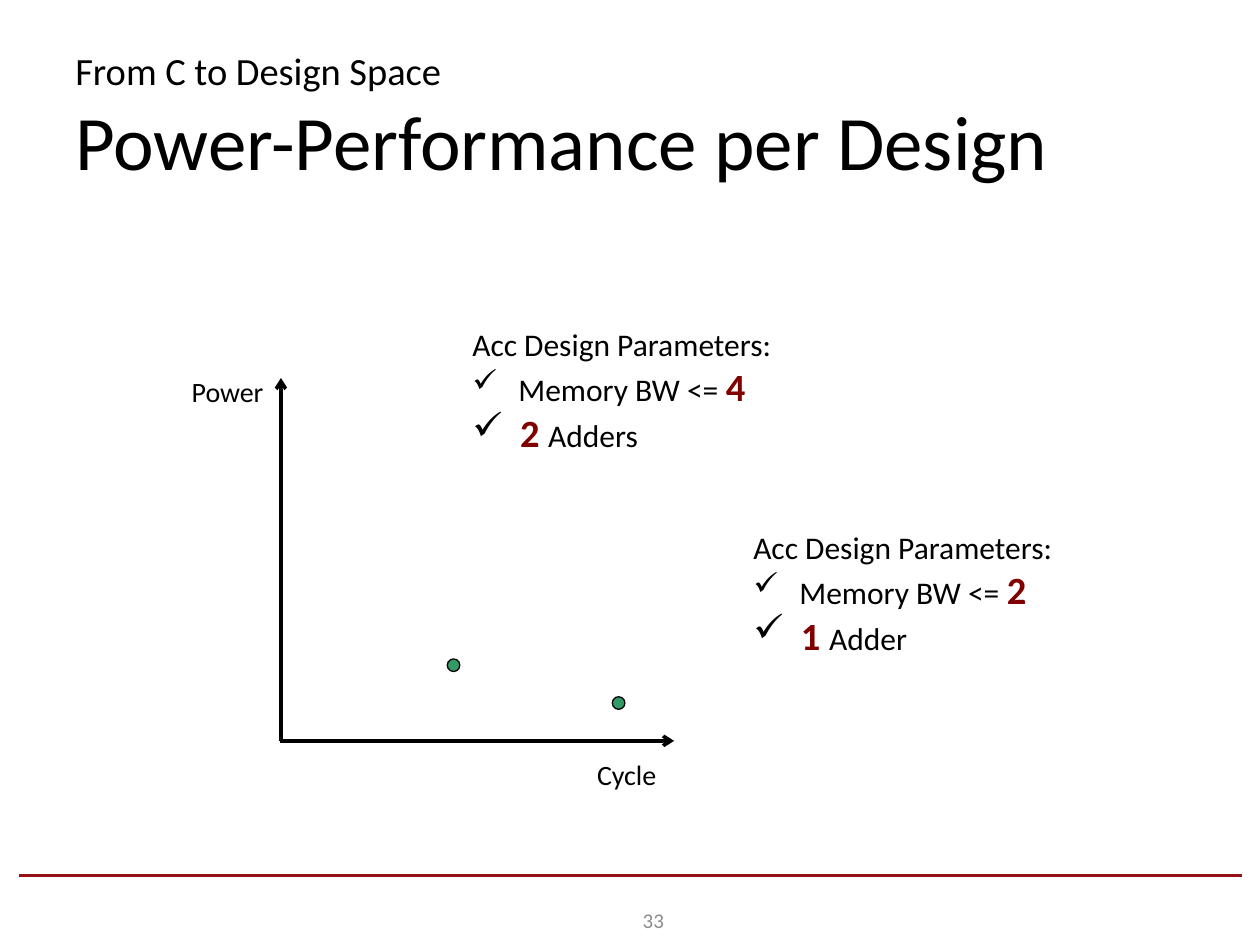
from dataclasses import dataclass

from lxml.etree import SubElement
from pptx import Presentation
from pptx.dml.color import RGBColor
from pptx.enum.shapes import MSO_CONNECTOR, MSO_SHAPE
from pptx.enum.text import MSO_ANCHOR, PP_ALIGN
from pptx.oxml.ns import qn
from pptx.util import Inches, Pt

BLACK = RGBColor(0, 0, 0)
GREY = RGBColor(0x8C, 0x8C, 0x8C)
RED = RGBColor(0x97, 0x12, 0x17)
MAROON = RGBColor(0x80, 0, 0)
GREEN = RGBColor(0x33, 0x99, 0x66)

BASE = {"name": "Calibri", "size": Pt(18), "bold": False}
BIG = {"size": Pt(22), "bold": True}
DOT = 0.1


@dataclass
class Line:
    start: tuple[float, float]
    end: tuple[float, float]
    color: RGBColor = BLACK
    arrow: bool = True


@dataclass
class Label:
    text: str
    box: tuple[float, float, float, float]
    size: int = 16
    color: RGBColor = BLACK
    align: PP_ALIGN = PP_ALIGN.LEFT
    anchor: MSO_ANCHOR = MSO_ANCHOR.TOP


@dataclass
class Design:
    dot: tuple[float, float]
    note: tuple[float, float]
    width: str
    count: str
    unit: str


LINES = [
    Line((0.15, 6.95), (9.86, 6.95), RED, False),
    Line((2.22, 5.88), (5.35, 5.88)),
    Line((2.23, 5.88), (2.23, 3)),
]
LABELS = [
    Label("Cycle", (4.64, 5.96, 0.98, 0.37)),
    Label("Power", (1.21, 2.92, 0.98, 0.37), align=PP_ALIGN.RIGHT),
    Label("33", (4.02, 7.1, 2.33, 0.4), 12, GREY, PP_ALIGN.CENTER, MSO_ANCHOR.MIDDLE),
]
DESIGNS = [
    Design((3.55, 5.23), (3.65, 2.53), "4", "2", "Adders"),
    Design((4.86, 5.53), (5.88, 4.14), "2", "1", "Adder"),
]


def add_run(para, text: str, color: RGBColor = BLACK, **form) -> None:
    run = para.add_run()
    run.text = text
    for key, value in (BASE | form).items():
        setattr(run.font, key, value)
    run.font.color.rgb = color


def add_box(slide, box: tuple, anchor: MSO_ANCHOR = MSO_ANCHOR.TOP):
    frame = slide.shapes.add_textbox(*map(Inches, box)).text_frame
    frame.word_wrap = True
    frame.vertical_anchor = anchor
    return frame


def add_check(para) -> None:
    props = para._p.get_or_add_pPr()
    props.set("marL", str(Inches(0.31)))
    props.set("indent", str(-Inches(0.31)))
    SubElement(props, qn("a:buChar"), char="✓")


def draw_line(slide, item: Line) -> None:
    line = slide.shapes.add_connector(
        MSO_CONNECTOR.STRAIGHT, *map(Inches, item.start + item.end))
    line.line.color.rgb = item.color
    line.line.width = Pt(2)
    if item.arrow:
        SubElement(line.line._get_or_add_ln(), qn("a:tailEnd"), type="arrow")
    SubElement(line._element.spPr, qn("a:effectLst"))


def draw_label(slide, item: Label) -> None:
    para = add_box(slide, item.box, item.anchor).paragraphs[0]
    para.alignment = item.align
    add_run(para, item.text, item.color, size=Pt(item.size))


def draw_design(slide, item: Design) -> None:
    # Point on the plot
    dot = slide.shapes.add_shape(
        MSO_SHAPE.OVAL, *map(Inches, item.dot + (DOT, DOT)))
    dot.shadow.inherit = False
    dot.fill.solid()
    dot.fill.fore_color.rgb = GREEN
    dot.line.color.rgb = BLACK
    dot.line.width = Pt(0.75)

    # Parameters of the design
    frame = add_box(slide, item.note + (3.62, 1.14))
    add_run(frame.paragraphs[0], "Acc Design Parameters:")
    para = frame.add_paragraph()
    add_check(para)
    add_run(para, " Memory BW <= ")
    add_run(para, item.width, MAROON, **BIG)
    para = frame.add_paragraph()
    add_check(para)
    add_run(para, " ", **BIG)
    add_run(para, f"{item.count} ", MAROON, **BIG)
    add_run(para, item.unit)


def draw_title(slide) -> None:
    para = add_box(slide, (0.5, 0.3, 9, 1.25), MSO_ANCHOR.MIDDLE).paragraphs[0]
    add_run(para, "From C to Design Space", size=Pt(22))
    para.add_line_break()
    add_run(para, "Power-Performance per Design", size=Pt(44))


def main() -> None:
    deck = Presentation()
    deck.slide_width, deck.slide_height = Inches(10), Inches(7.5)
    slide = deck.slides.add_slide(deck.slide_layouts[6])

    # Rule and axes, labels, designs, title
    for line in LINES:
        draw_line(slide, line)
    for label in LABELS:
        draw_label(slide, label)
    for design in DESIGNS:
        draw_design(slide, design)
    draw_title(slide)
    deck.save("out.pptx")


if __name__ == "__main__":
    main()
